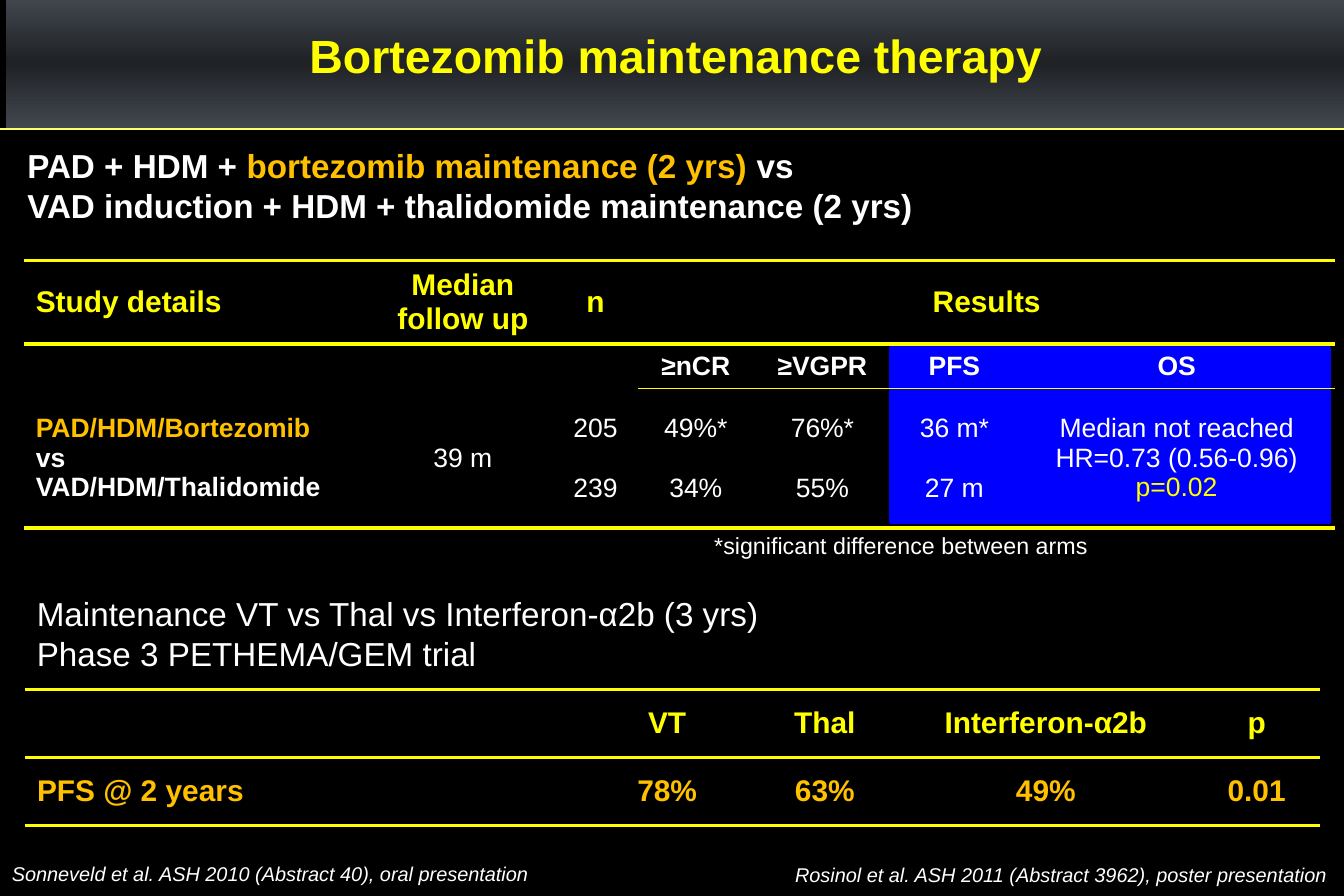
import copy
from typing import NamedTuple

import pptx
import pptx.dml.color
import pptx.enum.shapes
import pptx.enum.text
import pptx.oxml
import pptx.oxml.ns
import pptx.util
from pptx.util import Inches

ALIGN = pptx.enum.text.PP_ALIGN
ANCHOR = pptx.enum.text.MSO_ANCHOR
WHITE, YELLOW, GOLD, BLUE = "FFFFFF", "FFFF00", "FFC000", "0000FF"
DARK, STEEL = "1F2125", "424850"
THICK, THIN = 2.25, 1


class Run(NamedTuple):
    text: str
    color: str


class Cell(NamedTuple):
    lines: list
    size: float = 18
    color: str = YELLOW
    bold: bool = True
    align: ALIGN = ALIGN.CENTER
    gap: float = 0


class Grid(NamedTuple):
    box: tuple
    cols: list
    rows: list
    rules: list  # one list of widths by column for each row edge
    cells: list


class Note(NamedTuple):
    box: tuple
    lines: list
    size: float
    bold: bool = False
    italic: bool = False
    align: ALIGN = ALIGN.LEFT
    wrap: bool = True


def rgb(color: str) -> pptx.dml.color.RGBColor:
    return pptx.dml.color.RGBColor.from_string(color)


def write(frame, lines: list, *, size: float, color: str = WHITE, bold: bool = False,
          italic: bool = False, align: ALIGN = ALIGN.LEFT, gap: float = 0) -> None:
    """Fill a frame: each line is a string or a list of runs; "\\n" breaks a line."""
    for i, line in enumerate(lines):
        para = frame.paragraphs[0] if i == 0 else frame.add_paragraph()
        para.alignment = align
        para.space_before = pptx.util.Pt(gap if i else 0)
        for part in [Run(line, color)] if isinstance(line, str) else line:
            for j, text in enumerate(part.text.split("\n")):
                if j:
                    para.add_line_break()
                run = para.add_run()
                run.text = text
                font = run.font
                font.name, font.size = "Arial", pptx.util.Pt(size)
                font.bold, font.italic = bold, italic
                font.color.rgb = rgb(part.color)


def rule(cell, side: str, width: float) -> None:
    """Draw one cell edge; zero width hides it."""
    fill = (f'<a:solidFill><a:srgbClr val="{YELLOW}"/></a:solidFill>'
            if width else "<a:noFill/>")
    edge = pptx.oxml.parse_xml(
        f'<a:{side} {pptx.oxml.ns.nsdecls("a")} w="{pptx.util.Pt(width)}">{fill}</a:{side}>')
    cell._tc.get_or_add_tcPr().append(edge)


def draw_grid(slide, grid: Grid) -> None:
    box = map(Inches, grid.box)
    table = slide.shapes.add_table(len(grid.rows), len(grid.cols), *box).table
    table.first_row = table.horz_banding = False
    for col, width in zip(table.columns, grid.cols):
        col.width = Inches(width)
    for r, height in enumerate(grid.rows):
        table.rows[r].height = Inches(height)
        for c, item in enumerate(grid.cells[r]):
            cell = table.cell(r, c)
            cell.vertical_anchor = ANCHOR.MIDDLE
            cell.margin_top = cell.margin_bottom = Inches(0.03)
            widths = 0, 0, grid.rules[r][c], grid.rules[r + 1][c]
            for side, width in zip(("lnL", "lnR", "lnT", "lnB"), widths):
                rule(cell, side, width)
            cell.fill.background()
            if item:
                write(cell.text_frame, **item._asdict())
    if len(grid.cells[0]) == 7:
        table.cell(0, 3).merge(table.cell(0, 6))


def draw_note(slide, note: Note) -> None:
    frame = slide.shapes.add_textbox(*map(Inches, note.box)).text_frame
    frame.word_wrap = note.wrap
    write(frame, note.lines, size=note.size, bold=note.bold,
          italic=note.italic, align=note.align)


def draw_rect(slide, *box: float):
    kind = pptx.enum.shapes.MSO_SHAPE.RECTANGLE
    rect = slide.shapes.add_shape(kind, *map(Inches, box))
    rect.shadow.inherit = False
    return rect


def draw_head(slide) -> None:
    banner = draw_rect(slide, 0.05, -0.03, 11.25, 1.11)
    banner.line.fill.background()
    banner.fill.gradient()
    banner.fill.gradient_angle = 90
    first = banner._element.spPr.find(".//" + pptx.oxml.ns.qn("a:gs"))
    first.addnext(copy.deepcopy(first))
    stops = banner.fill.gradient_stops
    for stop, place, color in zip(stops, (0, 0.5, 1), (STEEL, DARK, STEEL)):
        stop.position, stop.color.rgb = place, rgb(color)

    line = slide.shapes.add_connector(pptx.enum.shapes.MSO_CONNECTOR.STRAIGHT,
                                      0, Inches(1.08), Inches(11.25), Inches(1.08))
    line.line.color.rgb = rgb("FFFF66")
    line.line.width = pptx.util.Pt(0.75)
    pptx.oxml.ns.qn("a:effectLst")
    line._element.spPr.append(
        pptx.oxml.parse_xml(f'<a:effectLst {pptx.oxml.ns.nsdecls("a")}/>'))

    title = slide.shapes.title
    title.left, title.top, title.width, title.height = map(Inches, (0.23, 0.15, 10.85, 1.06))
    frame = title.text_frame
    frame.auto_size = pptx.enum.text.MSO_AUTO_SIZE.NONE
    frame.vertical_anchor = ANCHOR.TOP
    frame.margin_top = Inches(0.08)
    write(frame, ["Bortezomib maintenance therapy"], size=28, color=YELLOW,
          bold=True, align=ALIGN.CENTER)
    slide.shapes._spTree.append(title._element)


def sub(text: str) -> Cell:
    return Cell([text], 16, WHITE)


def data(*lines, gap: float = 18.5) -> Cell:
    return Cell(list(lines), 16, WHITE, False, gap=gap)


ARMS = Cell([[Run("PAD/HDM/Bortezomib", GOLD)], "vs", "VAD/HDM/Thalidomide"],
            16, WHITE, align=ALIGN.LEFT)
SURVIVAL = data("Median not reached",
                [Run("HR=0.73 (0.56-0.96) ", WHITE), Run("p=0.02", YELLOW)], gap=0)
STUDY = Grid(
    (0.2, 2.18, 10.98, 2.24), [2.92, 1.51, 0.71, 0.97, 1.15, 1.06, 2.66], [0.7, 0.37, 1.17],
    [[THICK] * 7, [THICK] * 7, [0] * 3 + [THIN] * 4, [THICK] * 7],
    [[Cell(["Study details"], align=ALIGN.LEFT), Cell(["Median follow up"]), Cell(["n"]),
      Cell(["Results"]), None, None, None],
     [None] * 3 + [sub(text) for text in ("≥nCR", "≥VGPR", "PFS", "OS")],
     [ARMS, data("39 m"), data("205", "239"), data("49%*", "34%"),
      data("76%*", "55%"), data("36 m*", "27 m"), SURVIVAL]])
TRIAL = Grid(
    (0.21, 5.77, 10.84, 1.14), [4.67, 1.41, 1.23, 2.47, 1.06], [0.57, 0.57],
    [[THICK] * 5] * 3,
    [[None] + [Cell([text]) for text in ("VT", "Thal", "Interferon-α2b", "p")],
     [Cell(["PFS @ 2 years"], color=GOLD, align=ALIGN.LEFT)]
     + [Cell([text], color=GOLD) for text in ("78%", "63%", "49%", "0.01")]])
NOTES = [
    Note((0, 7.16, 8.11, 0.3),
         ["Sonneveld et al. ASH 2010 (Abstract 40), oral presentation"], 12, italic=True),
    Note((0.13, 1.17, 10.01, 0.77),
         [[Run("PAD + HDM + ", WHITE), Run("bortezomib maintenance (2 yrs) ", GOLD),
           Run("vs \nVAD induction + HDM + thalidomide maintenance (2 yrs)", WHITE)]],
         20, bold=True),
    Note((5.88, 4.4, 3.35, 0.34), ["*significant difference between arms"], 14, wrap=False),
    Note((0.21, 4.92, 9.66, 0.92),
         ["Maintenance VT vs Thal vs Interferon-α2b (3 yrs)\nPhase 3 PETHEMA/GEM trial"], 20),
    Note((6.47, 7.17, 4.74, 0.3),
         ["Rosinol et al. ASH 2011 (Abstract 3962), poster presentation"],
         12, italic=True, align=ALIGN.RIGHT, wrap=False),
]


def main() -> None:
    deck = pptx.Presentation()
    deck.slide_width, deck.slide_height = Inches(11.25), Inches(7.5)
    slide = deck.slides.add_slide(deck.slide_layouts[5])
    slide.background.fill.solid()
    slide.background.fill.fore_color.rgb = rgb("000000")
    panel = draw_rect(slide, 7.46, 2.91, 3.67, 1.46)
    panel.fill.solid()
    panel.fill.fore_color.rgb = panel.line.color.rgb = rgb(BLUE)
    panel.line.width = pptx.util.Pt(2)
    draw_head(slide)
    for grid in (STUDY, TRIAL):
        draw_grid(slide, grid)
    for note in NOTES:
        draw_note(slide, note)
    deck.save("out.pptx")


if __name__ == "__main__":
    main()
